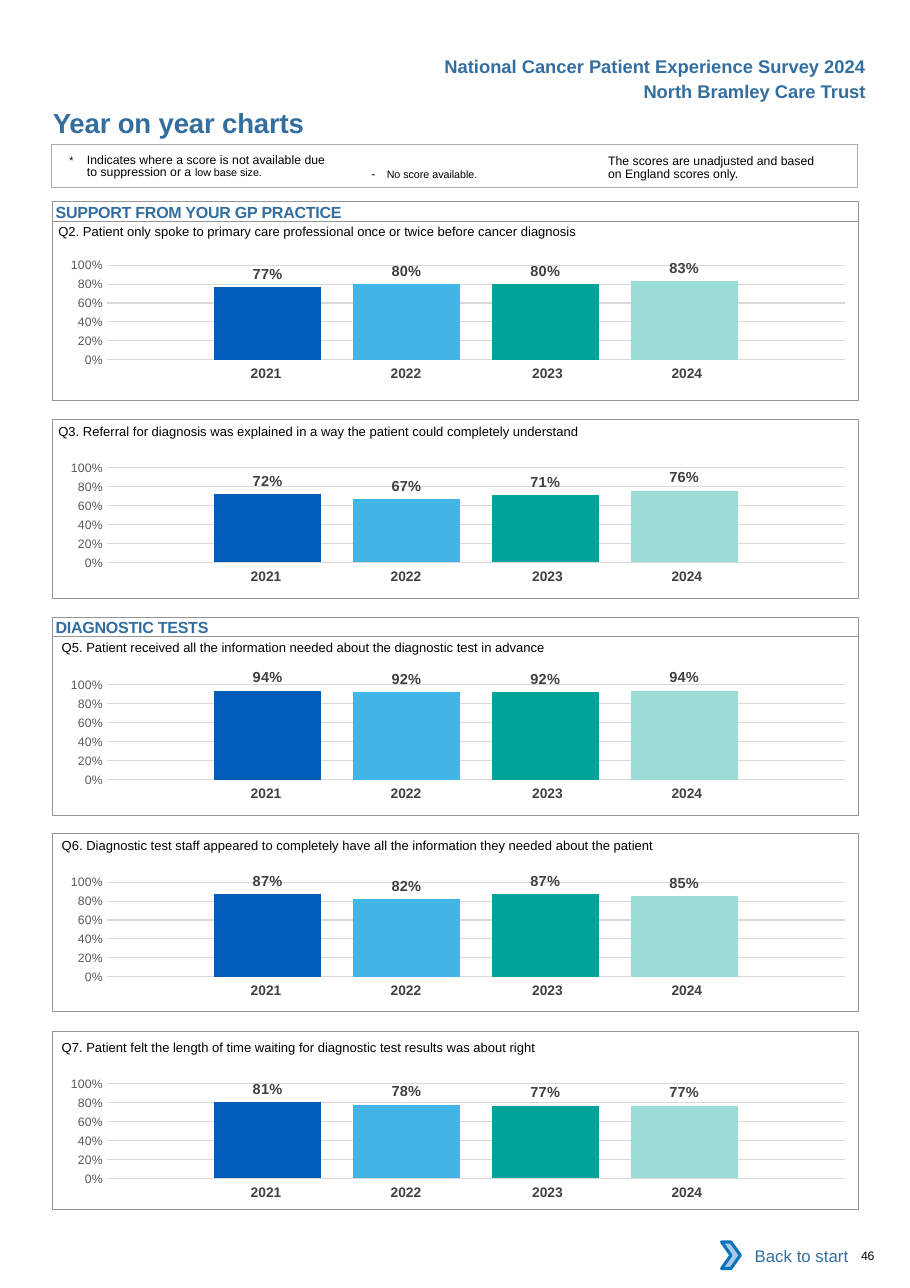
from dataclasses import dataclass

from pptx import Presentation
from pptx.chart.data import CategoryChartData
from pptx.dml.color import RGBColor
from pptx.enum.chart import XL_CHART_TYPE, XL_LABEL_POSITION, XL_TICK_MARK
from pptx.enum.shapes import MSO_SHAPE
from pptx.enum.text import MSO_ANCHOR, PP_ALIGN
from pptx.oxml import parse_xml
from pptx.oxml.ns import nsdecls
from pptx.util import Pt

COLUMNS = XL_CHART_TYPE.COLUMN_CLUSTERED
OUTSIDE_END = XL_LABEL_POSITION.OUTSIDE_END
NO_TICKS = XL_TICK_MARK.NONE
RECTANGLE, CHEVRON = MSO_SHAPE.RECTANGLE, MSO_SHAPE.CHEVRON
LEFT, CENTER, RIGHT = PP_ALIGN.LEFT, PP_ALIGN.CENTER, PP_ALIGN.RIGHT
TOP, MIDDLE = MSO_ANCHOR.TOP, MSO_ANCHOR.MIDDLE


@dataclass(frozen=True)
class Theme:
    font: str = "Arial"
    chart_font: str = "Calibri"
    heading: str = "336E9F"
    ink: str = "000000"
    paper: str = "FFFFFF"
    border: str = "939598"
    legend_border: str = "A9AAAD"
    grid: str = "D9D9D9"
    axis: str = "595959"
    label: str = "404040"
    year: str = "414042"
    arrow_fill: str = "A8C7E9"
    arrow_line: str = "0A74BB"
    bars: tuple = ("005EB8", "41B6E6", "00A499", "9CDCD7")
    title_size: float = 18
    header_size: float = 12
    link_size: float = 11
    section_size: float = 10.5
    chart_size: float = 10
    label_size: float = 9.5
    year_size: float = 9
    question_size: float = 8.5
    note_size: float = 8
    small_size: float = 7


@dataclass(frozen=True)
class Box:
    x: float
    y: float
    w: float
    h: float

    def inner(self, dx, dy, w, h):
        return Box(self.x + dx, self.y + dy, w, h)

    def lengths(self):
        return Pt(self.x), Pt(self.y), Pt(self.w), Pt(self.h)


THEME = Theme()
YEARS = ("2021", "2022", "2023", "2024")
YEAR_COLUMNS = ((91.44, 0), (91.44, 0), (96.48, 2.88), (91.44, 8.64))
PANEL_X, PANEL_W, PANEL_H = 34.56, 526.5, 116.64
BAND_H = 12.96
SECTIONS = (
    ("SUPPORT FROM YOUR GP PRACTICE", 3.6, (
        (144.72, 1.4, 15.12, (0.77, 0.8, 0.8, 0.83),
         "Q2. Patient only spoke to primary care professional once or twice before cancer diagnosis"),
        (274.32, 2.2, 18, (0.72, 0.67, 0.71, 0.76),
         "Q3. Referral for diagnosis was explained in a way the patient could completely understand"),
    )),
    ("DIAGNOSTIC TESTS", 5.76, (
        (416.16, 1.8, 18, (0.94, 0.92, 0.92, 0.94),
         "Q5. Patient received all the information needed about the diagnostic test in advance"),
        (544.32, 2.9, 18.72, (0.87, 0.82, 0.87, 0.85),
         "Q6. Diagnostic test staff appeared to completely have all the information they needed about the patient"),
        (673.92, 5.4, 20.88, (0.81, 0.78, 0.77, 0.77),
         "Q7. Patient felt the length of time waiting for diagnostic test results was about right"),
    )),
)


def style(font, size, color, bold=False, name=THEME.font):
    font.name, font.size, font.bold = name, Pt(size), bold
    font.color.rgb = RGBColor.from_string(color)


def write(frame, parts, color=THEME.ink, bold=False, align=LEFT, anchor=TOP, leading=None):
    frame.word_wrap = True
    frame.vertical_anchor = anchor
    frame.margin_left = frame.margin_right = frame.margin_top = frame.margin_bottom = 0
    line = frame.paragraphs[0]
    line.alignment = align
    if leading:
        line.line_spacing = Pt(leading)
    for words, size, tracking in parts:
        run = line.add_run()
        run.text = words
        style(run.font, size, color, bold)
        if tracking:
            run._r.get_or_add_rPr().set("spc", str(round(tracking * 100)))
    return line


def add_text(slide, box, parts, **options):
    return write(slide.shapes.add_textbox(*box.lengths()).text_frame, parts, **options)


def add_outline(slide, box, line=None, width=0.5, fill=None, kind=RECTANGLE):
    outline = slide.shapes.add_shape(kind, *box.lengths())
    outline.shadow.inherit = False
    if fill:
        outline.fill.solid()
        outline.fill.fore_color.rgb = RGBColor.from_string(fill)
    else:
        outline.fill.background()
    if line:
        outline.line.color.rgb = RGBColor.from_string(line)
        outline.line.width = Pt(width)
    else:
        outline.line.fill.background()
    return outline


def add_header(slide, box):
    for row, words in enumerate(("National Cancer Patient Experience Survey 2024",
                                 "North Bramley Care Trust")):
        add_text(slide, box.inner(0, row * 16.2, box.w, 14), [(words, THEME.header_size, 0)],
                 color=THEME.heading, bold=True, align=RIGHT)
    add_text(slide, box.inner(0, 33.2, 324, 21.6), [("Year on year charts", THEME.title_size, -0.1)],
             color=THEME.heading, bold=True)


def add_legend(slide, box):
    size, small = THEME.note_size, THEME.small_size
    add_outline(slide, box, THEME.legend_border, 0.75)
    suppressed = add_text(slide, box.inner(11.5, 6.4, 171, 18), [
        ("*\t", small, 0),
        ("Indicates where a score is not available due to suppression or a ", size, 0),
        ("low base size.", small, 0)], leading=8.1)
    indent = suppressed._p.get_or_add_pPr()
    indent.set("marL", str(Pt(11.5)))
    indent.set("indent", str(Pt(-11.5)))
    add_text(slide, box.inner(208.8, 14.2, 120, 10),
             [("- ", size, 2.6), ("No score available.", small, 0)])
    add_text(slide, box.inner(363.6, 7.6, 140, 18),
             [("The scores are unadjusted and based on England scores only.", size, 0)], leading=8.1)


def add_section_band(slide, box, heading):
    band = add_outline(slide, box, THEME.border)
    write(band.text_frame, [(heading, THEME.section_size, -0.15)], color=THEME.heading, bold=True)
    band.text_frame.margin_left = Pt(1.8)
    band.text_frame.margin_top = Pt(0.5)


def add_score_chart(slide, box, scores):
    data = CategoryChartData(number_format="0%")
    data.categories = ["1"]
    for year, score in zip(YEARS, scores):
        data.add_series(year, [score])
    chart = slide.shapes.add_chart(COLUMNS, *box.lengths(), data).chart
    chart.has_legend = chart.has_title = False
    style(chart.font, THEME.chart_size, THEME.ink, name=THEME.chart_font)
    chart.category_axis.visible = False
    axis = chart.value_axis
    axis.minimum_scale, axis.maximum_scale, axis.major_unit = 0, 1, 0.2
    axis.major_tick_mark = axis.minor_tick_mark = NO_TICKS
    axis.format.line.fill.background()
    axis.major_gridlines.format.line.color.rgb = RGBColor.from_string(THEME.grid)
    axis.major_gridlines.format.line.width = Pt(0.75)
    axis.tick_labels.number_format = "0%"
    axis.tick_labels.number_format_is_linked = False
    style(axis.tick_labels.font, THEME.note_size, THEME.axis)
    plot = chart.plots[0]
    plot.gap_width, plot.overlap, plot.vary_by_categories = 200, -30, False
    for bar, color in zip(plot.series, THEME.bars):
        bar.format.fill.solid()
        bar.format.fill.fore_color.rgb = RGBColor.from_string(color)
        labels = bar.data_labels
        labels.show_value, labels.position = True, OUTSIDE_END
        labels.number_format, labels.number_format_is_linked = "0%", False
        style(labels.font, THEME.label_size, THEME.label, True)
    area = chart._chartSpace.chart.plotArea
    for layout in area.xpath("c:layout"):
        area.remove(layout)
    area.insert(0, parse_xml(
        f'<c:layout {nsdecls("c")}><c:manualLayout><c:layoutTarget val="inner"/>'
        '<c:xMode val="edge"/><c:yMode val="edge"/><c:x val="0.08"/><c:y val="0.145"/>'
        '<c:w val="0.915"/><c:h val="0.666"/></c:manualLayout></c:layout>'))


def add_year_row(slide, box):
    table = slide.shapes.add_table(1, len(YEARS), *box.lengths()).table
    table.first_row = table.horz_banding = False
    for index, (year, (width, margin)) in enumerate(zip(YEARS, YEAR_COLUMNS)):
        table.columns[index].width = Pt(width)
        cell = table.cell(0, index)
        cell.fill.background()
        cell.margin_left, cell.margin_right = Pt(7.2), Pt(margin)
        cell.text_frame.text = year
        line = cell.text_frame.paragraphs[0]
        line.alignment = CENTER
        style(line.runs[0].font, THEME.year_size, THEME.year, True)


def add_question_panel(slide, box, question, inset, text_drop, chart_drop, scores):
    add_text(slide, box.inner(inset, text_drop, box.w - inset, 11),
             [(question, THEME.question_size, 0)])
    add_score_chart(slide, box.inner(-6.48, chart_drop, box.w, 92.88), scores)
    add_year_row(slide, box.inner(90, chart_drop + 76, 370.8, 19.44))
    add_outline(slide, box, THEME.border)


def add_footer(slide, box):
    link = add_outline(slide, box.inner(5.04, 0, 84.96, box.h), fill=THEME.paper)
    write(link.text_frame, [("Back to start", THEME.link_size, 0)],
          color=THEME.heading, align=RIGHT, anchor=MIDDLE)
    link.text_frame.margin_right = Pt(7.2)
    add_outline(slide, box.inner(0, 6.48, 12.24, 17.28), THEME.arrow_line, 2, THEME.arrow_fill, CHEVRON)
    add_text(slide, box.inner(91.2, 0, 24, box.h), [("46", THEME.note_size, -0.2)], anchor=MIDDLE)


def main():
    deck = Presentation()
    deck.slide_width, deck.slide_height = Pt(594.72), Pt(841.68)
    slide = deck.slides.add_slide(deck.slide_layouts[6])
    add_header(slide, Box(34.56, 36.2, 531.36, 55))
    add_legend(slide, Box(33.84, 94.32, PANEL_W, 28.08))
    for heading, inset, questions in SECTIONS:
        add_section_band(slide, Box(PANEL_X, questions[0][0] - BAND_H, PANEL_W, BAND_H), heading)
        for top, text_drop, chart_drop, scores, question in questions:
            add_question_panel(slide, Box(PANEL_X, top, PANEL_W, PANEL_H),
                               question, inset, text_drop, chart_drop, scores)
    add_footer(slide, Box(471.6, 805.2, 115.2, 30.24))
    deck.save("out.pptx")


if __name__ == "__main__":
    main()
